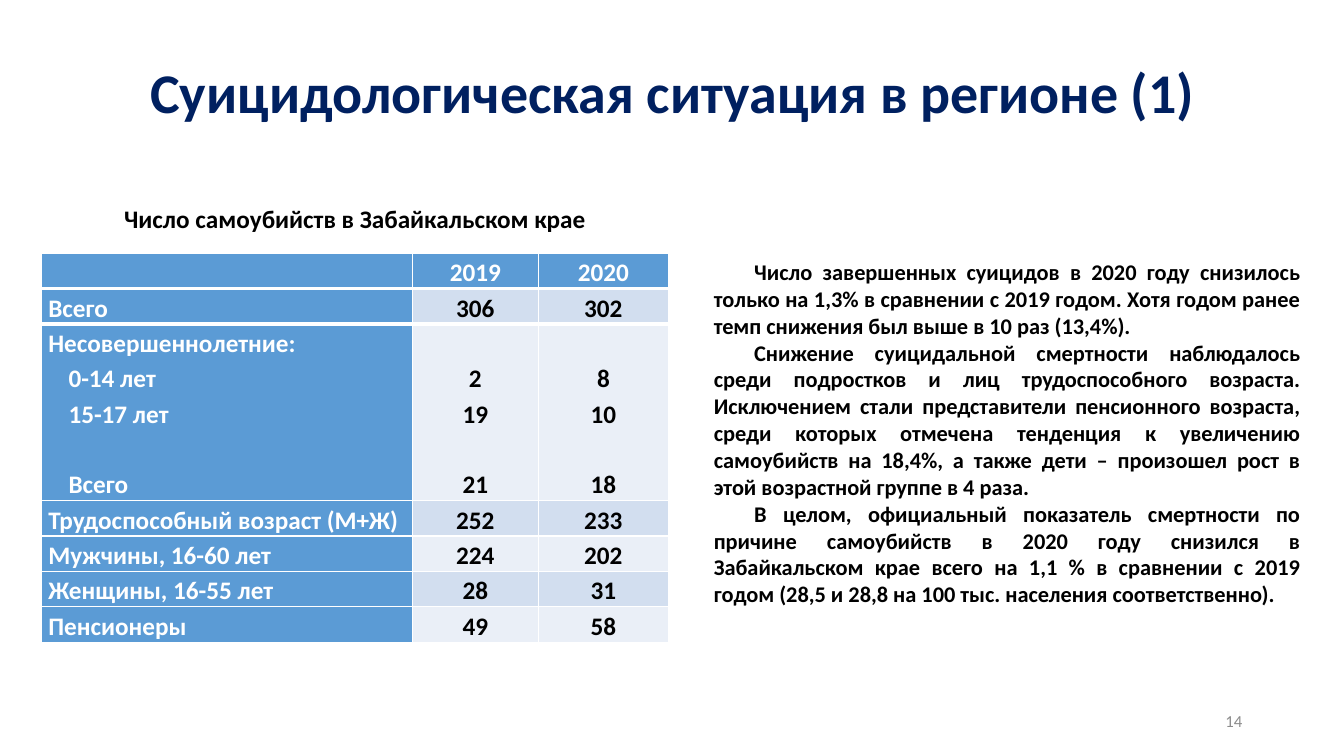
"""Build the slide on the suicide statistics of the region."""
from dataclasses import dataclass

from lxml.etree import SubElement
from pptx import Presentation
from pptx.dml.color import RGBColor
from pptx.enum.text import MSO_ANCHOR as Anchor, MSO_AUTO_SIZE as AutoSize, PP_ALIGN as Align
from pptx.oxml import parse_xml
from pptx.oxml.ns import nsdecls, qn
from pptx.util import Inches, Pt

TITLE = "Суицидологическая ситуация в регионе (1)"
CAPTION = "Число самоубийств в Забайкальском крае"
PAGE_NUMBER = "14"
ROWS = [
    ([], ["2019"], ["2020"]),
    (["Всего"], ["306"], ["302"]),
    (["Несовершеннолетние:", "0-14 лет", "15-17 лет", "Всего"], ["2", "19", "21"], ["8", "10", "18"]),
    (["Трудоспособный возраст (М+Ж)"], ["252"], ["233"]),
    (["Мужчины, 16-60 лет"], ["224"], ["202"]),
    (["Женщины, 16-55 лет"], ["28"], ["31"]),
    (["Пенсионеры"], ["49"], ["58"]),
]
FINDINGS = [
    "Число завершенных суицидов в 2020 году снизилось только на 1,3% в сравнении с 2019 годом. "
    "Хотя годом ранее темп снижения был выше в 10 раз (13,4%).",
    "Снижение суицидальной смертности наблюдалось среди подростков и лиц трудоспособного возраста. "
    "Исключением стали представители пенсионного возраста, среди которых отмечена тенденция к "
    "увеличению самоубийств на 18,4%, а также дети – произошел рост в этой возрастной группе в 4 раза.",
    "В целом, официальный показатель смертности по причине самоубийств в 2020 году снизился "
    "в Забайкальском крае всего на 1,1 % в сравнении с 2019 годом "
    "(28,5 и 28,8 на 100 тыс. населения соответственно).",
]

WIDTH, HEIGHT = 13.33, 7.5
CONTENT_TOP = 2.51
TABLE_LEFT = 0.41
COLUMNS = [3.68, 1.25, 1.29]
LINE = 0.35
CELL_MARGIN = 0.07
SUBROW_INDENT = 0.2
FIRST_LINE_INDENT = 0.4
TITLE_BOUNDS = (0.92, 0.4, 11.5, 1.1)
CAPTION_BOUNDS = (1.11, 1.97, 4.82, 0.4)
FINDINGS_BOUNDS = (6.98, CONTENT_TOP, 6.02, 3.6)
NUMBER_BOUNDS = (9.42, 6.95, 3, 0.4)


@dataclass(frozen=True)
class Theme:
    font: str = "Calibri"
    navy: str = "002060"
    blue: str = "5B9BD5"
    bands: tuple = ("EAEFF7", "D2DEEF")
    black: str = "000000"
    white: str = "FFFFFF"
    grey: str = "8C8C8C"
    title: int = 40
    table: int = 18
    body: int = 16
    number: int = 12
    header_rule: int = 3


THEME = Theme()


def place(shape, bounds):
    shape.left, shape.top, shape.width, shape.height = map(Inches, bounds)


def write(frame, lines, size, color, align, bold=True, spacing=1.0):
    for index, line in enumerate(lines):
        para = frame.paragraphs[0] if index == 0 else frame.add_paragraph()
        para.alignment, para.line_spacing = align, spacing
        para.space_before = Pt(0)
        span = para.add_run()
        span.text = line
        span.font.name, span.font.size, span.font.bold = THEME.font, Pt(size), bold
        span.font.color.rgb = RGBColor.from_string(color)


def indent(para, margin=0.0, first_line=0.0):
    properties = para._p.get_or_add_pPr()
    properties.set("marL", str(Inches(margin)))
    properties.set("indent", str(Inches(first_line)))
    SubElement(properties, qn("a:buNone"))


def add_title(page):
    title = page.shapes.title
    place(title, TITLE_BOUNDS)
    title.text_frame.vertical_anchor = Anchor.MIDDLE
    write(title.text_frame, [TITLE], THEME.title, THEME.navy, Align.CENTER, spacing=0.9)


def add_findings(page):
    body = page.placeholders[1]
    place(body, FINDINGS_BOUNDS)
    frame = body.text_frame
    frame.auto_size = AutoSize.NONE
    write(frame, FINDINGS, THEME.body, THEME.black, Align.JUSTIFY)
    for para in frame.paragraphs:
        indent(para, first_line=FIRST_LINE_INDENT)


def add_label(page, bounds, text, size, color, align, bold=True, wrap=True):
    frame = page.shapes.add_textbox(*map(Inches, bounds)).text_frame
    frame.word_wrap = wrap
    frame.vertical_anchor = Anchor.MIDDLE
    write(frame, [text], size, color, align, bold)


def rule_edge(cell, edge):
    cell._tc.get_or_add_tcPr().insert(0, parse_xml(
        f'<a:{edge} {nsdecls("a")} w="{Pt(THEME.header_rule)}"><a:solidFill>'
        f'<a:srgbClr val="{THEME.white}"/></a:solidFill></a:{edge}>'))


def fill_cell(cell, lines, row, column):
    heading = row == 0 or column == 0
    grouped = len(lines) > 1
    cell.margin_left = cell.margin_right = Inches(CELL_MARGIN)
    cell.margin_top = cell.margin_bottom = 0
    cell.vertical_anchor = Anchor.BOTTOM if grouped else Anchor.MIDDLE
    cell.fill.solid()
    cell.fill.fore_color.rgb = RGBColor.from_string(THEME.blue if heading else THEME.bands[row % 2])
    write(cell.text_frame, lines, THEME.table, THEME.white if heading else THEME.black,
          Align.CENTER if column else Align.LEFT, spacing=1.15)
    paras = cell.text_frame.paragraphs
    if grouped:
        paras[-1].space_before = Inches(LINE)
    if column == 0:
        for para in paras[1:]:
            indent(para, margin=SUBROW_INDENT)


def row_height(labels):
    gap_above_total = 1 if len(labels) > 1 else 0
    return LINE * (max(len(labels), 1) + gap_above_total)


def add_statistics(page):
    heights = [row_height(labels) for labels, *years in ROWS]
    bounds = (TABLE_LEFT, CONTENT_TOP, sum(COLUMNS), sum(heights))
    table = page.shapes.add_table(len(ROWS), len(COLUMNS), *map(Inches, bounds)).table
    for column, width in zip(table.columns, COLUMNS):
        column.width = Inches(width)
    for row, height in zip(table.rows, heights):
        row.height = Inches(height)
    for row, cells in enumerate(ROWS):
        for column, lines in enumerate(cells):
            fill_cell(table.cell(row, column), lines, row, column)
    for column in range(len(COLUMNS)):
        rule_edge(table.cell(0, column), "lnB")
        rule_edge(table.cell(1, column), "lnT")


def main():
    deck = Presentation()
    deck.slide_width, deck.slide_height = Inches(WIDTH), Inches(HEIGHT)
    page = deck.slides.add_slide(deck.slide_layouts.get_by_name("Title and Content"))
    add_title(page)
    add_statistics(page)
    add_label(page, CAPTION_BOUNDS, CAPTION, THEME.table, THEME.black, Align.CENTER, wrap=False)
    add_findings(page)
    add_label(page, NUMBER_BOUNDS, PAGE_NUMBER, THEME.number, THEME.grey, Align.RIGHT, bold=False)
    deck.save("out.pptx")


if __name__ == "__main__":
    main()
